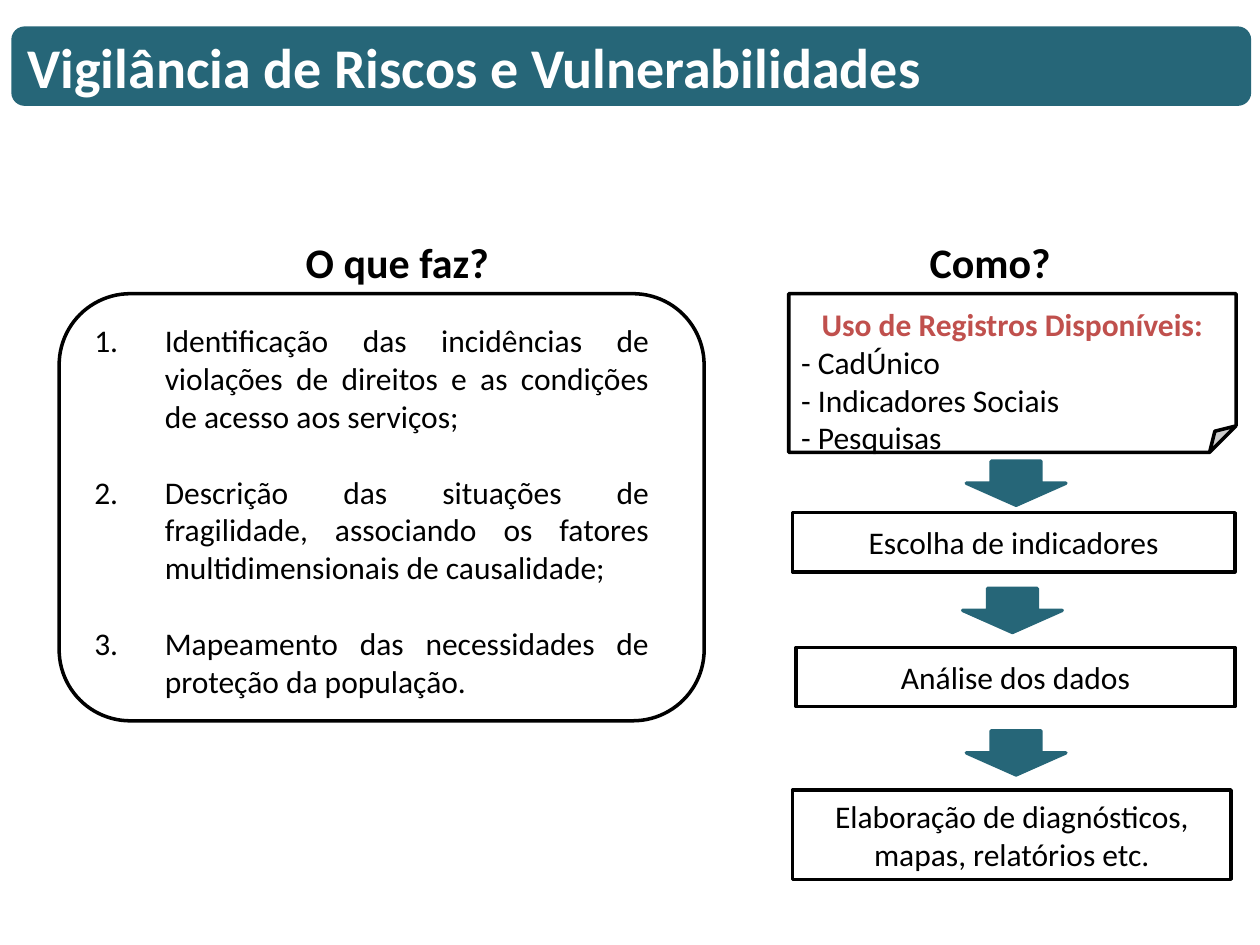
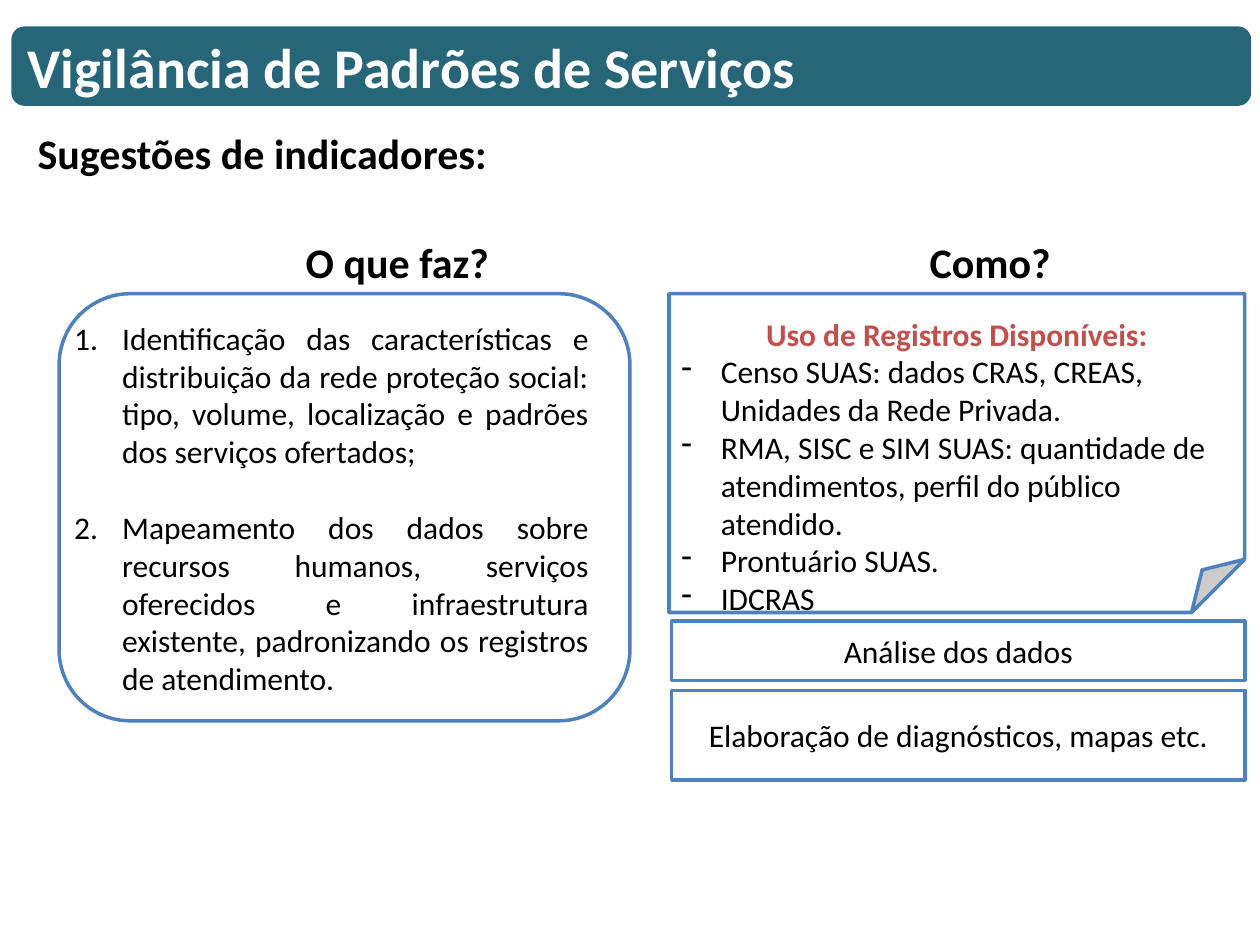
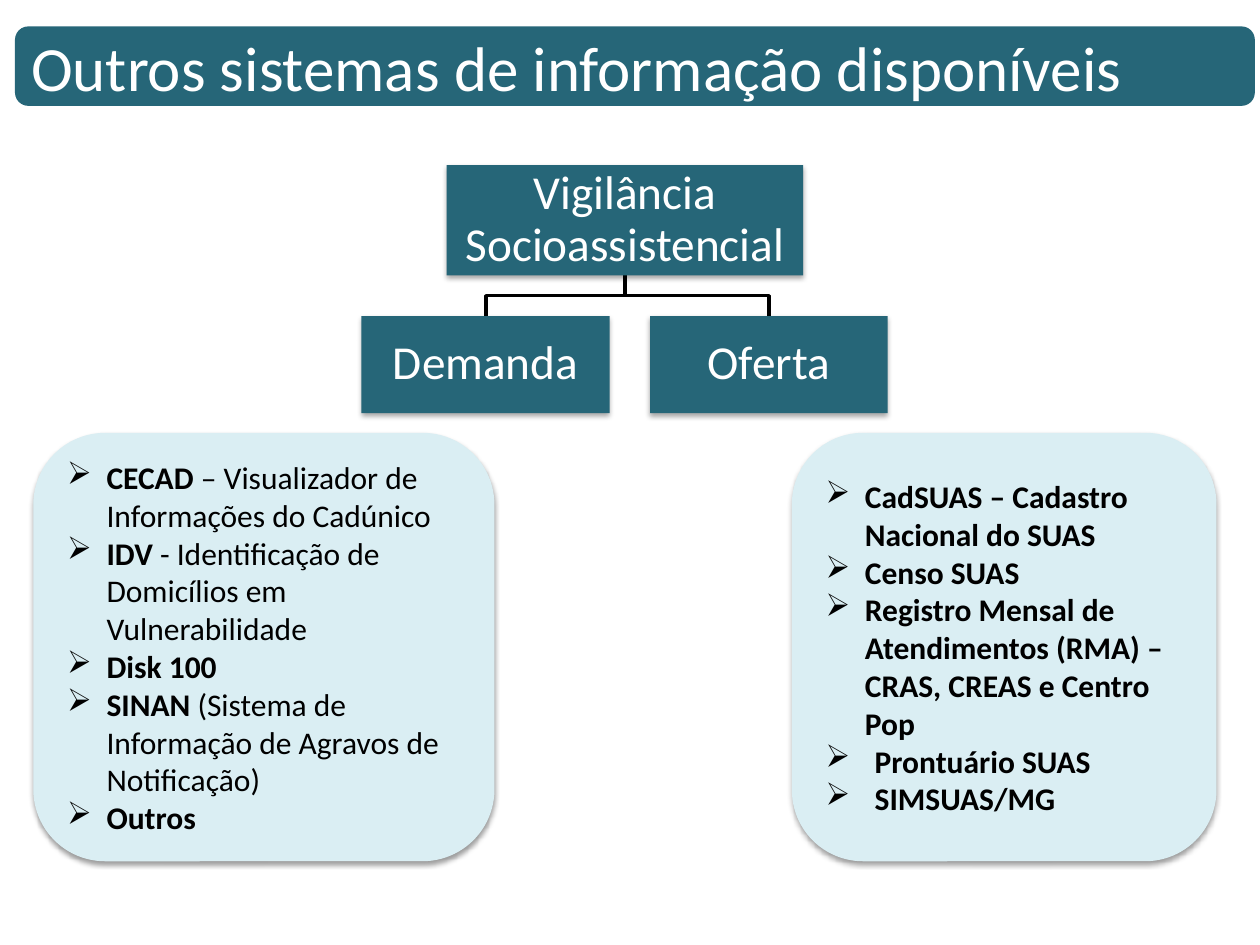
from lxml import etree
from pptx import Presentation
from pptx.dml.color import RGBColor
from pptx.enum import shapes, text
from pptx.oxml import ns
from pptx.util import Pt

TEAL = RGBColor(0x26, 0x66, 0x78)
BLUE = RGBColor(0x4F, 0x81, 0xBD)
RED = RGBColor(0xC0, 0x50, 0x4D)
PALE = RGBColor(0xDA, 0xEE, 0xF3)
BLACK = RGBColor(0, 0, 0)
WHITE = RGBColor(255, 255, 255)
FONT = "Calibri"
KIND = shapes.MSO_SHAPE
LEFT, CENTER, JUSTIFY = text.PP_ALIGN.LEFT, text.PP_ALIGN.CENTER, text.PP_ALIGN.JUSTIFY
TOP, MIDDLE = text.MSO_ANCHOR.TOP, text.MSO_ANCHOR.MIDDLE
NUMBER = ("buAutoNum", "type", "arabicPeriod")
DASH = ("buChar", "char", "-")
ARROW = ("buChar", "char", "Ø")


def add_box(s, kind, at, fill=None, line=None, width=2, shadow=0):
    at = [Pt(v) for v in at]
    if kind is None:
        sp = s.shapes.add_textbox(*at)
    else:
        sp = s.shapes.add_shape(kind, *at)
        sp.shadow.inherit = False
        sp.fill.solid()
        sp.fill.fore_color.rgb = fill
        if line is None:
            sp.line.fill.background()
        else:
            sp.line.color.rgb = line
            sp.line.width = Pt(width)
    if shadow:
        effects = sp._element.spPr.find(ns.qn("a:effectLst"))
        outer = etree.SubElement(effects, ns.qn("a:outerShdw"), blurRad=str(Pt(3.1)),
                                 dist=str(Pt(1.7)), dir="5400000", rotWithShape="0")
        color = etree.SubElement(outer, ns.qn("a:srgbClr"), val=str(BLACK))
        etree.SubElement(color, ns.qn("a:alpha"), val=str(shadow * 1000))
    tf = sp.text_frame
    tf.word_wrap = True
    tf.vertical_anchor = TOP if kind is None else MIDDLE
    return sp


def write(tf, items, size=18, color=BLACK, bold=False, align=LEFT, bullet=None, indent=0, gap=0):
    for item in items:
        p = tf.add_paragraph() if tf.text else tf.paragraphs[0]
        p.alignment = align
        if gap and p._p is not tf.paragraphs[0]._p:
            p.space_before = Pt(gap)
        if bullet:
            tag, key, value = bullet
            pPr = p._p.get_or_add_pPr()
            pPr.set("marL", str(Pt(indent)))
            pPr.set("indent", str(-Pt(indent)))
            if bullet == ARROW:
                etree.SubElement(pPr, ns.qn("a:buFont"), typeface="Wingdings")
            etree.SubElement(pPr, ns.qn("a:" + tag)).set(key, value)
        parts = item if isinstance(item, tuple) else (item,)
        for i, part in enumerate(parts):
            r = p.add_run()
            r.text = part
            r.font.name = FONT
            r.font.size = Pt(size)
            r.font.bold = bold and i == 0
            r.font.color.rgb = color


prs = Presentation()
prs.slide_width, prs.slide_height = Pt(720), Pt(540)

titles = [
    ("Vigilância de Riscos e Vulnerabilidades", 6.5, 32, True),
    ("Vigilância de Padrões de Serviços", 6.5, 32, True),
    ("Outros sistemas de informação disponíveis", 8.6, 36, False),
]
for title, left, size, bold in titles:
    s = prs.slides.add_slide(prs.slide_layouts[6])
    sp = add_box(s, KIND.FLOWCHART_ALTERNATE_PROCESS, (left, 15.1, 708.5, 45.4), TEAL)
    write(sp.text_frame, [title], size, WHITE, bold)
risks, standards, systems = prs.slides

panels = [
    (risks, BLACK, 368.6, (46.8, 180, 331.2, 225.4), 40.3, [
        "Identificação das incidências de violações de direitos e as condições de acesso aos serviços;",
        "Descrição das situações de fragilidade, associando os fatores multidimensionais de causalidade;",
        "Mapeamento das necessidades de proteção da população.",
    ], (450.7, 167.8, 255.6, 90.7), 6.5, None, [
        "- CadÚnico",
        "- Indicadores Sociais",
        "- Pesquisas",
    ], [
        ("Escolha de indicadores", (452.9, 293, 252.7, 33.8)),
        ("Análise dos dados", (455, 370, 250.6, 33.8)),
        ("Elaboração de diagnósticos, mapas, relatórios etc.", (452.9, 451.4, 250.6, 51.1)),
    ]),
    (standards, BLUE, 326.2, (35.3, 178.6, 308.2, 227.5), 27.4, [
        "Identificação das características e distribuição da rede proteção social: tipo, volume, "
        "localização e padrões dos serviços ofertados;",
        "Mapeamento dos dados sobre recursos humanos, serviços oferecidos e infraestrutura existente, "
        "padronizando os registros de atendimento.",
    ], (382.3, 167.8, 329, 182.2), 12, DASH, [
        "Censo SUAS: dados CRAS, CREAS, Unidades da Rede Privada.",
        "RMA, SISC e SIM SUAS: quantidade de atendimentos, perfil do público atendido.",
        "Prontuário SUAS.",
        "IDCRAS",
    ], [
        ("Análise dos dados", (383.8, 355, 327.6, 33.8)),
        ("Elaboração de diagnósticos, mapas etc.", (383.8, 394.6, 327.6, 51.1)),
    ]),
]
for s, line, width, list_at, indent, tasks, note_at, note_top, bullet, records, steps in panels:
    add_box(s, KIND.ROUNDED_RECTANGLE, (33.8, 167.8, width, 244.1), WHITE, line)
    sp = add_box(s, None, list_at)
    write(sp.text_frame, tasks, align=JUSTIFY, bullet=NUMBER, indent=indent, gap=21.7)
    for heading, left in [("O que faz?", 99.4), ("Como?", 438.2)]:
        sp = add_box(s, None, (left, 131.8, 255.2, 36.5))
        write(sp.text_frame, [heading], 24, bold=True, align=CENTER)
    tf = add_box(s, KIND.FOLDED_CORNER, note_at, WHITE, line).text_frame
    tf.vertical_anchor = TOP
    tf.margin_top = Pt(note_top)
    write(tf, ["Uso de Registros Disponíveis:"], color=RED, bold=True, align=CENTER)
    write(tf, records, bullet=bullet, indent=22.5)
    for step, at in steps:
        sp = add_box(s, KIND.RECTANGLE, at, WHITE, line)
        write(sp.text_frame, [step], align=CENTER)

for left, top in [(552.2, 263.5), (550.1, 336.2), (552.2, 417.6)]:
    add_box(risks, KIND.DOWN_ARROW, (left, top, 56.9, 25.2), TEAL, TEAL)

sp = add_box(standards, None, (14.4, 69.1, 550, 36))
write(sp.text_frame, ["Sugestões de indicadores:"], 24, bold=True)

for branch_x in (439.6, 277.6):
    outline = systems.shapes.build_freeform(Pt(357.1), Pt(157.3))
    corners = [(357.1, 169), (branch_x, 169), (branch_x, 180.7)]
    outline.add_line_segments([(Pt(x), Pt(y)) for x, y in corners], close=False)
    sp = outline.convert_to_shape()
    sp.shadow.inherit = False
    sp.fill.background()
    sp.line.color.rgb = BLACK
    sp.line.width = Pt(2)

nodes = [
    ("Vigilância Socioassistencial", (255.2, 94.3, 203.8, 63)),
    ("Demanda", (206.6, 180.7, 141.8, 55.4)),
    ("Oferta", (371.5, 180.7, 135.7, 55.4)),
]
for name, at in nodes:
    tf = add_box(systems, KIND.RECTANGLE, at, TEAL, shadow=35).text_frame
    tf.margin_left = tf.margin_right = tf.margin_top = tf.margin_bottom = Pt(1.4)
    write(tf, [name], 27, WHITE, align=CENTER)
    tf.paragraphs[0].line_spacing = 0.9

cards = [
    (19.4, 262.8, [
        ("CECAD", " – Visualizador de Informações do Cadúnico"),
        ("IDV ", "- Identificação de Domicílios em Vulnerabilidade"),
        "Disk 100",
        ("SINAN", " (Sistema de Informação de Agravos de Notificação)"),
        "Outros",
    ], []),
    (452.9, 241.9, [
        "CadSUAS – Cadastro Nacional do SUAS",
        "Censo SUAS",
        "Registro Mensal de Atendimentos (RMA) – CRAS, CREAS e Centro Pop",
    ], ["Prontuário SUAS", "SIMSUAS/MG"]),
]
for left, width, sources, wide_sources in cards:
    tf = add_box(systems, KIND.ROUNDED_RECTANGLE, (left, 247.7, width, 244.1),
                 PALE, PALE, 0.75, 38).text_frame
    write(tf, sources, bold=True, bullet=ARROW, indent=22.5)
    write(tf, wide_sources, bold=True, bullet=ARROW, indent=28.1)

prs.save("out.pptx")
